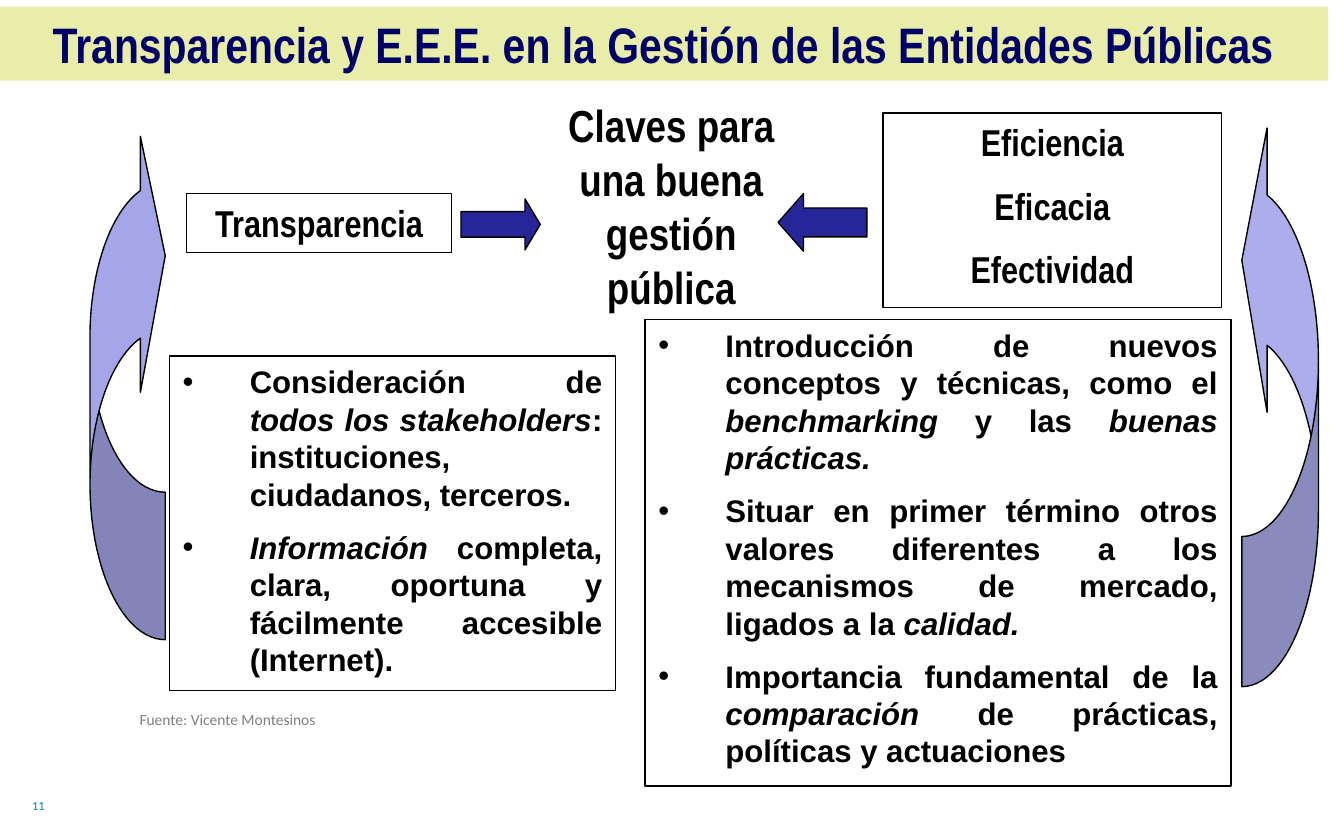
from collections import namedtuple

from lxml.etree import SubElement
from pptx import Presentation
from pptx.dml.color import RGBColor
from pptx.enum.shapes import MSO_SHAPE
from pptx.enum.text import MSO_ANCHOR, MSO_AUTO_SIZE, PP_ALIGN
from pptx.oxml.ns import qn
from pptx.util import Inches, Pt

COLORS = {
    "band": "E8EEAA", "title": "000066", "ink": "000000", "source": "808080",
    "number": "00918E", "arrow": "262699", "left_curve": "A5A5E9", "right_curve": "ADADEB",
}
# The page is a grid of 100 columns by 62.5 rows, each a tenth of an inch
COLUMNS, ROWS = 100, 62.5
UNIT = Inches(0.1)
Box = namedtuple("Box", "left top width height")

HEADING = {"name": "Arial Narrow", "size": 20, "bold": True, "color": "ink"}
KEY = {**HEADING, "size": 24}
TITLE = {**HEADING, "size": 26.7, "color": "title"}
BODY = {**HEADING, "name": "Arial", "size": 16.7}
SOURCE = {"name": "Calibri", "size": 8.3, "bold": False, "color": "source"}
NUMBER = {**SOURCE, "size": 6.7, "color": "number"}

# Asterisks mark italic spans
TRANSPARENCY_POINTS = [
    "Consideración de *todos los stakeholders*: instituciones, ciudadanos, terceros.",
    "*Información* completa, clara, oportuna y fácilmente accesible (Internet).",
]
EFFICIENCY_POINTS = [
    "Introducción de nuevos conceptos y técnicas, como el *benchmarking* y las *buenas prácticas.*",
    "Situar en primer término otros valores diferentes a los mecanismos de mercado, "
    "ligados a la *calidad.*",
    "Importancia fundamental de la *comparación* de prácticas, políticas y actuaciones",
]


def rgb(name):
    return RGBColor.from_string(COLORS[name])


def place(box):
    return [round(length * UNIT) for length in box]


def add_bullet(para):
    properties = para._p.get_or_add_pPr()
    properties.set("marL", str(Inches(0.5)))
    properties.set("indent", str(-Inches(0.5)))
    SubElement(properties, qn("a:buFont")).set("typeface", "Arial")
    SubElement(properties, qn("a:buChar")).set("char", "•")


def write(shape, lines, style, align=PP_ALIGN.CENTER, bullets=False):
    frame = shape.text_frame
    settings = {"word_wrap": True, "auto_size": MSO_AUTO_SIZE.NONE,
                "vertical_anchor": MSO_ANCHOR.TOP}
    for name, value in settings.items():
        setattr(frame, name, value)
    for index, line in enumerate(lines):
        para = frame.add_paragraph() if index else frame.paragraphs[0]
        if bullets:
            add_bullet(para)
        para.alignment = align
        para.space_before = Pt(style["size"] / 2 if index else 0)
        for part, words in enumerate(line.split("*")):
            if not words:
                continue
            span = para.add_run()
            span.text = words
            font = {"name": style["name"], "size": Pt(style["size"]),
                    "bold": style["bold"], "italic": part % 2 == 1}
            for name, value in font.items():
                setattr(span.font, name, value)
            span.font.color.rgb = rgb(style["color"])


def add_outlined(page, kind, box, fill=None):
    shape = page.shapes.add_shape(kind, *place(box))
    shape.shadow.inherit = False
    if fill:
        shape.fill.solid()
        shape.fill.fore_color.rgb = rgb(fill)
    else:
        shape.fill.background()
    shape.line.color.rgb = rgb("ink")
    shape.line.width = Pt(0.75)
    return shape


def add_title(page, box):
    title = page.shapes.title
    title.left, title.top, title.width, title.height = place(box)
    title.fill.solid()
    title.fill.fore_color.rgb = rgb("band")
    write(title, ["Transparencia y E.E.E. en la Gestión de las Entidades Públicas"], TITLE)


def add_text(page, box, text, style, align=PP_ALIGN.LEFT):
    write(page.shapes.add_textbox(*place(box)), [text], style, align)


def add_concept(page, box, lines):
    write(add_outlined(page, MSO_SHAPE.RECTANGLE, box), lines, HEADING)


def add_points(page, box, lines):
    panel = add_outlined(page, MSO_SHAPE.RECTANGLE, box)
    write(panel, lines, BODY, PP_ALIGN.JUSTIFY, bullets=True)


def add_arrow(page, box, kind, fill, adjustments, flipped=False):
    arrow = add_outlined(page, kind, box, fill)
    for index, value in enumerate(adjustments):
        arrow.adjustments[index] = value
    if flipped:
        arrow._element.spPr.find(qn("a:xfrm")).set("flipV", "1")


def main():
    deck = Presentation()
    deck.slide_width, deck.slide_height = round(COLUMNS * UNIT), round(ROWS * UNIT)
    page = deck.slides.add_slide(deck.slide_layouts[5])

    # Title band and footer
    add_title(page, Box(0, 0.5, 98.8, 5.5))
    add_text(page, Box(1.4, 58.9, 20.8, 3), "11", NUMBER)
    add_text(page, Box(9.4, 52.3, 49.7, 1.8), "Fuente: Vicente Montesinos", SOURCE)

    # Key idea between the two concepts
    add_text(page, Box(39.8, 6.8, 20.3, 17.2), "Claves para una buena gestión pública",
             KEY, PP_ALIGN.CENTER)
    add_concept(page, Box(13.9, 14.4, 19.7, 4.4), ["Transparencia"])
    add_concept(page, Box(65.7, 8.4, 25.2, 14.5), ["Eficiencia", "Eficacia", "Efectividad"])

    # Points that support each concept
    add_points(page, Box(12.6, 26.5, 33.2, 24.9), TRANSPARENCY_POINTS)
    add_points(page, Box(48, 23.8, 43.6, 34.7), EFFICIENCY_POINTS)

    # Arrows towards the key idea
    add_arrow(page, Box(34.3, 14.8, 5.9, 3.8), MSO_SHAPE.RIGHT_ARROW, "arrow", (0.5, 0.3))
    add_arrow(page, Box(57.9, 14.4, 6.6, 4.3), MSO_SHAPE.LEFT_ARROW, "arrow", (0.5, 0.44))

    # Curved arrows from the points up to the concepts
    add_arrow(page, Box(92.4, 8.8, 5.7, 42.3), MSO_SHAPE.CURVED_LEFT_ARROW,
              "right_curve", (1.96, 3.92, 0.33), flipped=True)
    add_arrow(page, Box(6.7, 9.5, 5.6, 38.1), MSO_SHAPE.CURVED_RIGHT_ARROW,
              "left_curve", (1.96, 3.93, 0.33), flipped=True)

    deck.save("out.pptx")


if __name__ == "__main__":
    main()
